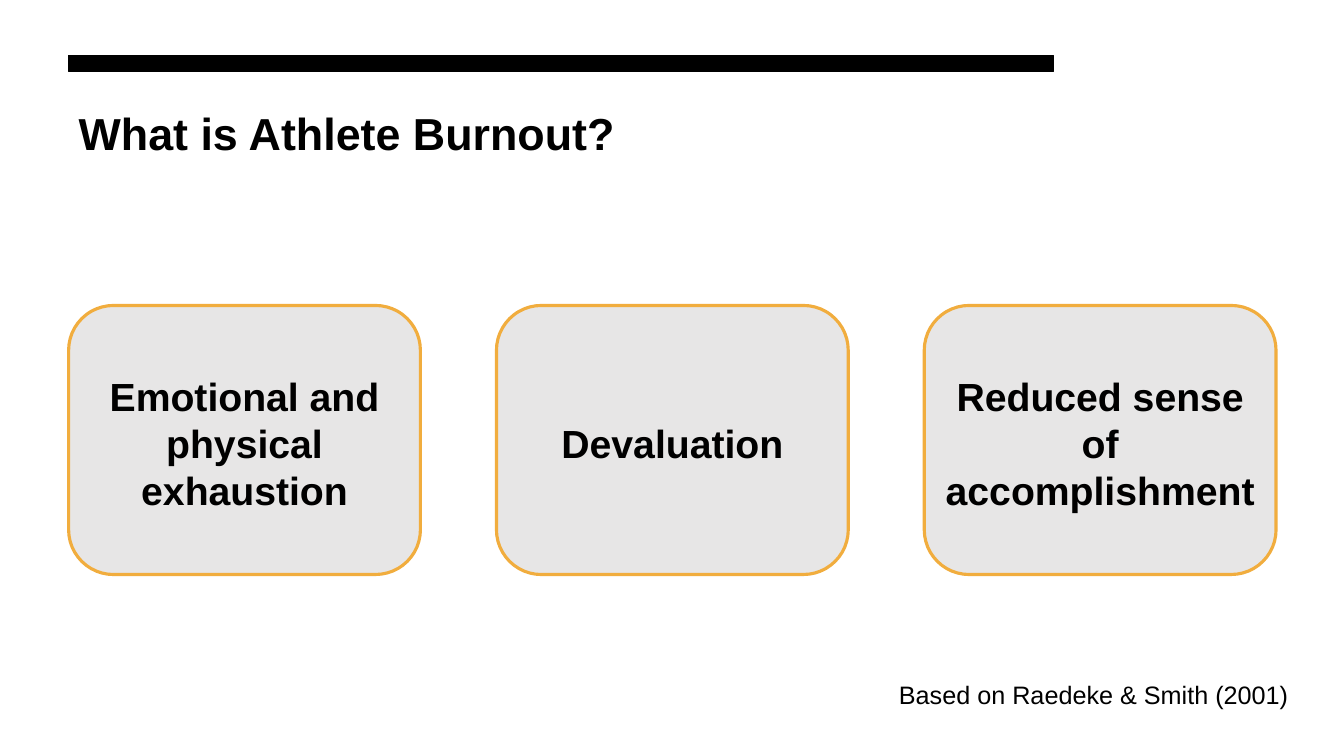
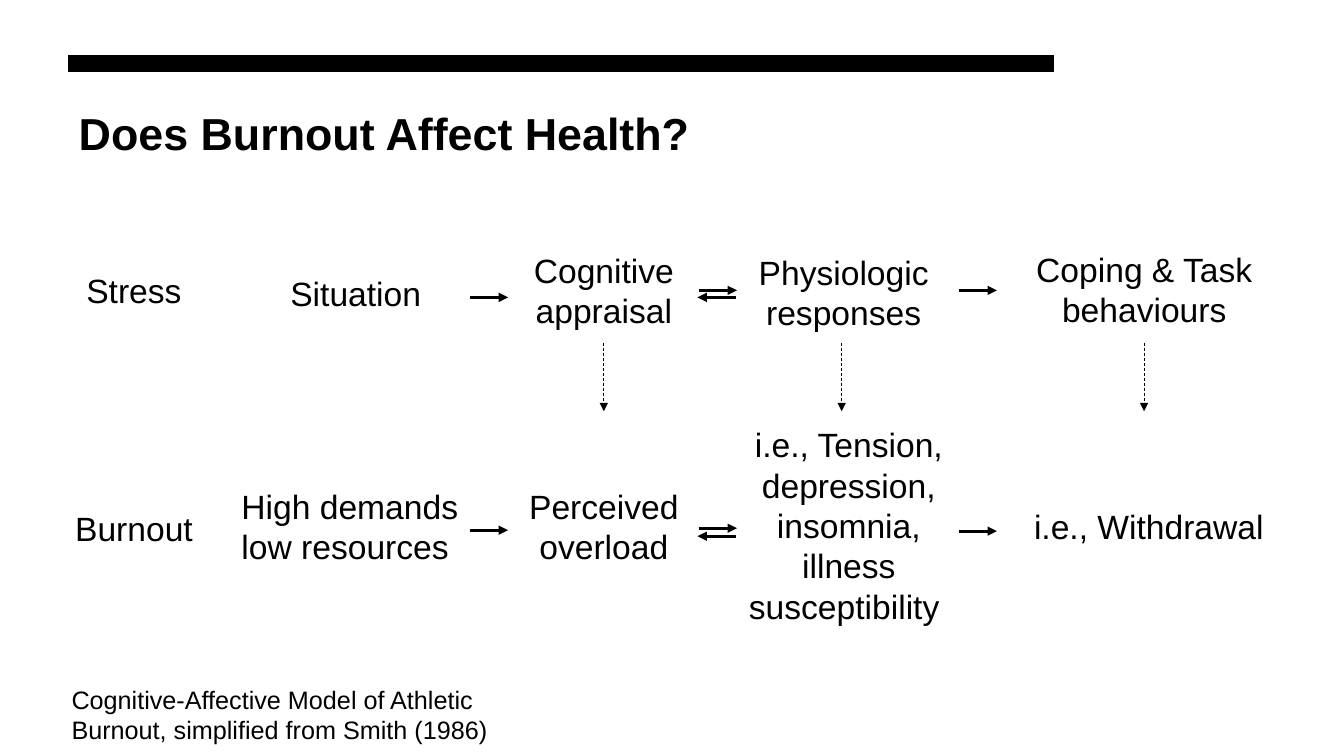
import pptx
import pptx.util
import pptx.dml.color
import pptx.enum.dml
import pptx.enum.shapes
import pptx.enum.text
import pptx.oxml
import pptx.oxml.ns

Pt = pptx.util.Pt
SHAPE = pptx.enum.shapes.MSO_SHAPE
ALIGN = pptx.enum.text.PP_ALIGN
ANCHOR = pptx.enum.text.MSO_ANCHOR

COLORS = {"ink": "000000", "card": "E7E6E6", "edge": "F1AD3E"}
FONT = "Arial"
LEFT = 49  # shared left edge of bar, title and cards
WIDE = 188.6  # width of a model label


def color(name):
    return pptx.dml.color.RGBColor.from_string(COLORS[name])


def style(para, size, bold=False, align=ALIGN.LEFT):
    para.alignment = align
    font = para.font
    font.name, font.size, font.bold = FONT, Pt(size), bold
    font.color.rgb = color("ink")


def add_box(slide, kind, x, y, w, h, fill, edge, weight):
    box = slide.shapes.add_shape(kind, Pt(x), Pt(y), Pt(w), Pt(h))
    box.shadow.inherit = False
    box.fill.solid()
    box.fill.fore_color.rgb = color(fill)
    box.line.color.rgb = color(edge)
    box.line.width = Pt(weight)
    return box


def add_text(slide, text, x, y, w, h, size, align=ALIGN.LEFT):
    frame = slide.shapes.add_textbox(Pt(x), Pt(y), Pt(w), Pt(h)).text_frame
    frame.word_wrap = True
    frame.text = text
    style(frame.paragraphs[0], size, align=align)


def add_card(slide, text, x):
    card = add_box(slide, SHAPE.ROUNDED_RECTANGLE, x, 218.2, 251.3, 192.2,
                   "card", "edge", 2.25)
    frame = card.text_frame
    frame.word_wrap = True
    frame.vertical_anchor = ANCHOR.MIDDLE
    frame.margin_left = frame.margin_right = Pt(3)
    frame.margin_top, frame.margin_bottom = Pt(4), Pt(0)
    frame.text = text
    style(frame.paragraphs[0], 28, True, ALIGN.CENTER)


def add_arrow(slide, x1, y1, x2, y2, weight=2.25, dashed=False):
    arrow = slide.shapes.add_connector(
        pptx.enum.shapes.MSO_CONNECTOR.STRAIGHT, Pt(x1), Pt(y1), Pt(x2), Pt(y2))
    line = arrow.line
    line.color.rgb = color("ink")
    line.width = Pt(weight)
    if dashed:
        line.dash_style = pptx.enum.dml.MSO_LINE.DASH
    # Arrowhead, and no shadow
    props = arrow._element.spPr
    space = pptx.oxml.ns.nsdecls("a")
    props.find(pptx.oxml.ns.qn("a:ln")).append(
        pptx.oxml.parse_xml(f'<a:tailEnd {space} type="triangle"/>'))
    props.append(pptx.oxml.parse_xml(f"<a:effectLst {space}/>"))


def add_slide(deck, text):
    slide = deck.slides.add_slide(deck.slide_layouts[5])
    # Title under the black bar
    title = slide.shapes.title
    title.left, title.top = Pt(LEFT), Pt(76.3)
    title.width, title.height = Pt(684), Pt(65.5)
    frame = title.text_frame
    frame.auto_size = pptx.enum.text.MSO_AUTO_SIZE.NONE
    frame.vertical_anchor = ANCHOR.TOP
    frame.text = text
    style(frame.paragraphs[0], 32, True)
    frame.paragraphs[0].line_spacing = 0.9
    add_box(slide, SHAPE.RECTANGLE, LEFT, 39.5, 703.4, 11.5, "ink", "ink", 1)
    return slide


def add_parts(deck):
    slide = add_slide(deck, "What is Athlete Burnout?")
    cards = ["Emotional and physical exhaustion", "Devaluation",
             "Reduced sense of accomplishment"]
    for i, text in enumerate(cards):
        add_card(slide, text, LEFT + i * 305.6)
    add_text(slide, "Based on Raedeke & Smith (2001)", 635, 481.7, 301, 29, 18)


def add_model(deck):
    slide = add_slide(deck, "Does Burnout Affect Health?")
    # Labels: text, left, top, width, height
    labels = [
        # Stress row
        ("Stress", 1.4, 189.4, WIDE, 36),
        ("Situation", 159.8, 191.5, WIDE, 36),
        ("Cognitive appraisal", 337, 175, WIDE, 65.5),
        ("Physiologic responses", 508.3, 176.4, WIDE, 65.5),
        ("Coping & Task behaviours", 723, 174.2, WIDE, 65.5),
        # Burnout row
        ("Burnout", 1.4, 359.3, WIDE, 36),
        ("High demands low resources ", 161.3, 343.4, 177.1, 65.5),
        ("Perceived overload", 337, 343.4, WIDE, 65.5),
        ("i.e., Tension, depression, insomnia, illness susceptibility ",
         512, 299.5, WIDE, 152.6),
        (" i.e., Withdrawal", 723, 357.8, WIDE, 36),
    ]
    for text, x, y, w, h in labels:
        add_text(slide, text, x, y, w, h, 24, ALIGN.CENTER)

    # Steps along each row: start, height, direction
    steps = [(335.5, 212.4, 1), (335.5, 378.7, 1),
             (499, 207.4, 1), (499, 377.3, 1),
             (684.7, 207.4, 1), (684.7, 379.4, 1),
             (525.6, 212.4, -1), (525.6, 383, -1)]
    for x, y, way in steps:
        add_arrow(slide, x, y, x + way * 27.4, y)

    # Links from stress down to burnout
    for x in (431.3, 601.2, 817.2):
        add_arrow(slide, x, 244.8, x, 293.8, 0.5, True)

    add_text(slide, "Cognitive-Affective Model of Athletic Burnout, "
             "simplified from Smith (1986)", 44, 485.3, 315.4, 51, 18)


def main():
    deck = pptx.Presentation()
    deck.slide_width, deck.slide_height = Pt(960), Pt(540)
    add_parts(deck)
    add_model(deck)
    deck.save("out.pptx")


if __name__ == "__main__":
    main()
